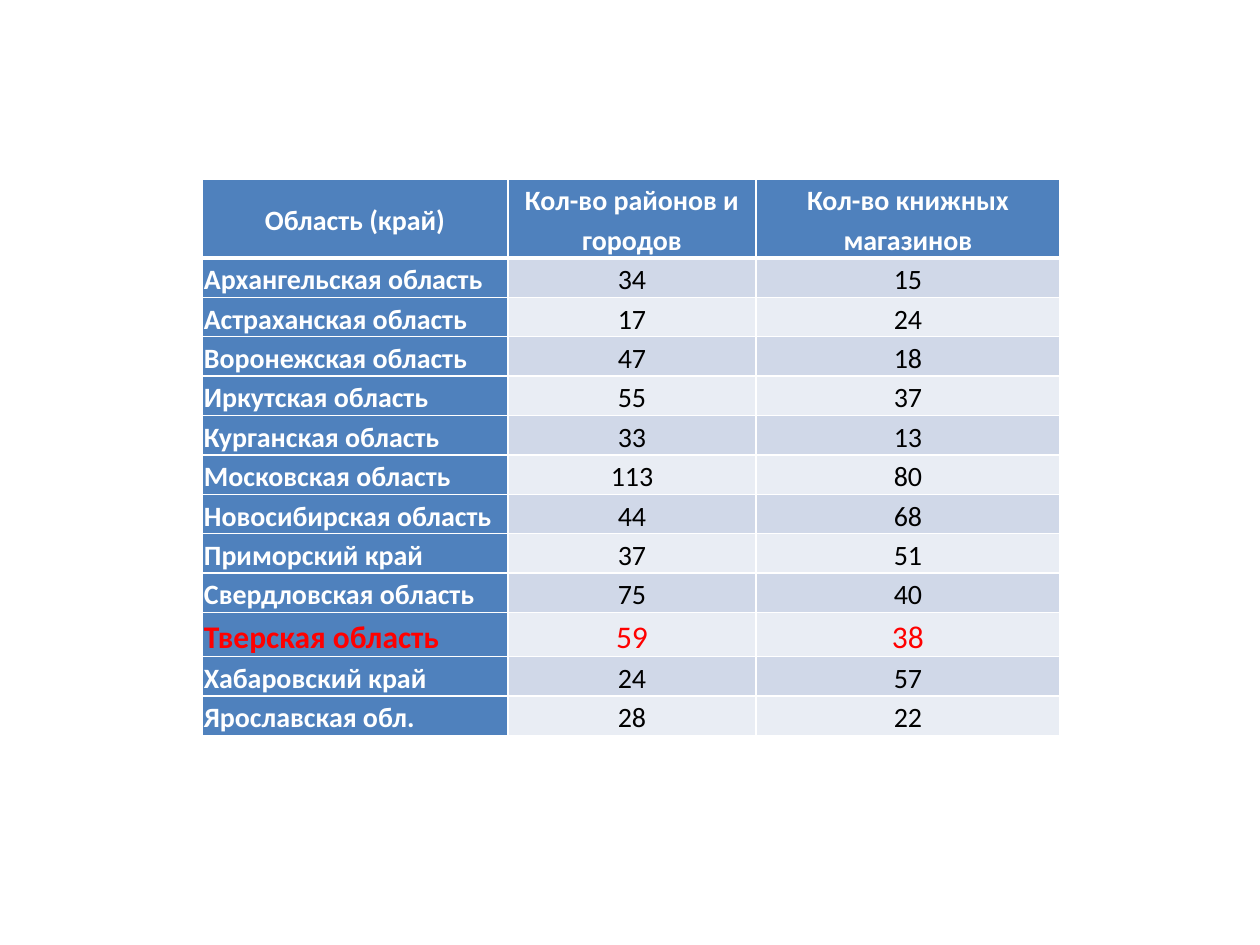
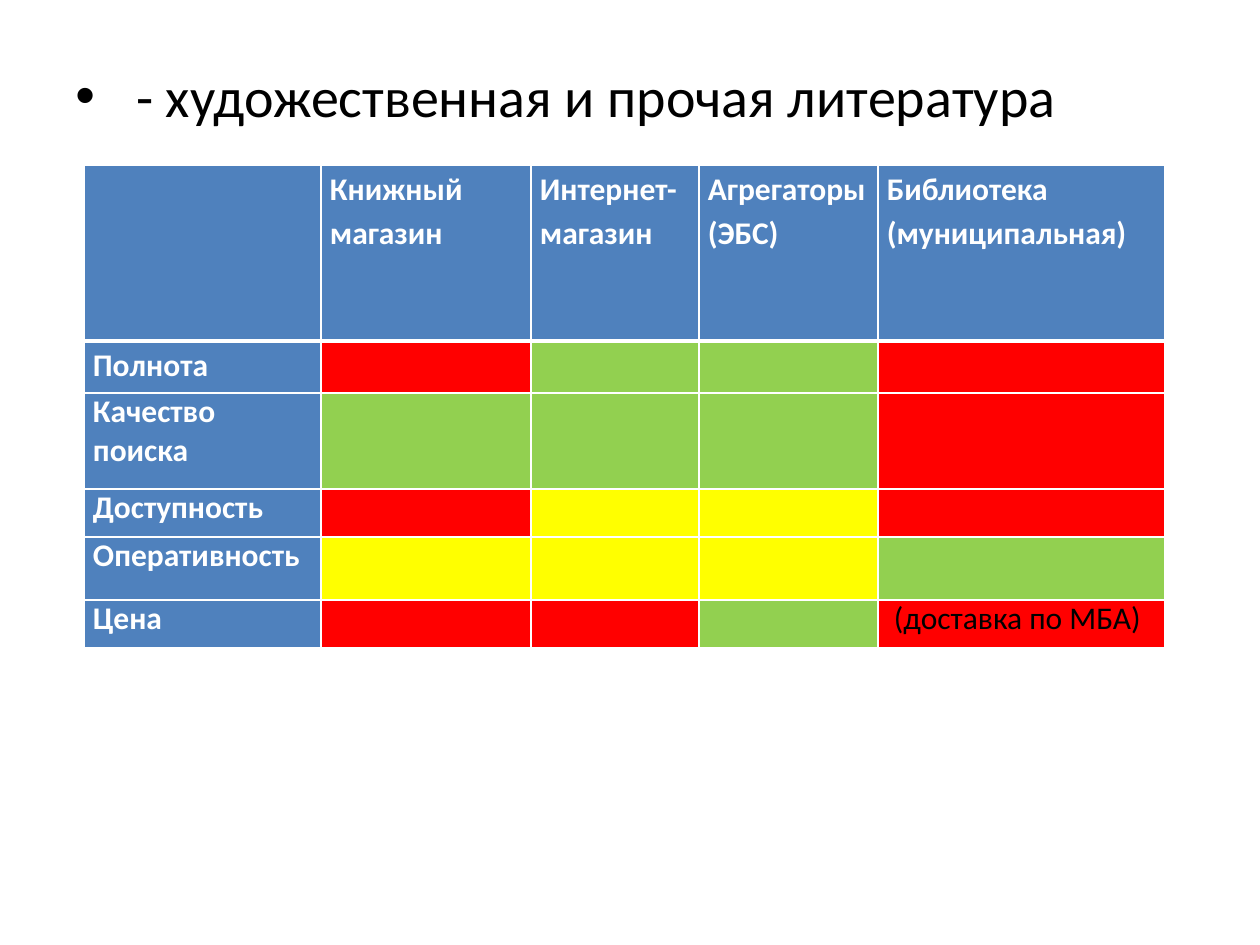
import pptx
import pptx.dml.color
import pptx.enum.text
import pptx.oxml
import pptx.oxml.ns
import pptx.util

PX = 914400 / 126
FONT = "Calibri"
WHITE, BLACK, BLUE = "FFFFFF", "000000", "4F81BD"
RED, GREEN, YELLOW = "FF0000", "92D050", "FFFF00"
BANDS = ["D0D8E8", "E9EDF4"]
RATING_FILLS = {"R": RED, "G": GREEN, "Y": YELLOW}
LEFT = pptx.enum.text.PP_ALIGN.LEFT
CENTER = pptx.enum.text.PP_ALIGN.CENTER
JUSTIFY = pptx.enum.text.PP_ALIGN.JUSTIFY
TOP = pptx.enum.text.MSO_ANCHOR.TOP
MIDDLE = pptx.enum.text.MSO_ANCHOR.MIDDLE

REGION_HEADERS = ["Область (край)", "Кол-во районов и городов", "Кол-во книжных магазинов"]
REGIONS = [
    ("Архангельская область", 34, 15),
    ("Астраханская область", 17, 24),
    ("Воронежская область", 47, 18),
    ("Иркутская область", 55, 37),
    ("Курганская область", 33, 13),
    ("Московская область", 113, 80),
    ("Новосибирская область", 44, 68),
    ("Приморский край", 37, 51),
    ("Свердловская область", 75, 40),
    ("Тверская область", 59, 38),
    ("Хабаровский край", 24, 57),
    ("Ярославская обл.", 28, 22),
]
HIGHLIGHTED_REGION = "Тверская область"

SOURCE_HEADERS = ["", "Книжный магазин", "Интернет-магазин", "Агрегаторы\n(ЭБС)",
                  "Библиотека (муниципальная)"]
# Criterion, rating of each source, paragraph format
RATINGS = [
    ("Полнота", "RGGR", {"line_spacing": 1.15}),
    ("Качество поиска", "GGGR", {"alignment": JUSTIFY}),
    ("Доступность", "RYYR", {}),
    ("Оперативность", "YYYG", {}),
    ("Цена", "RRGR", {}),
]
DELIVERY_NOTE = " (доставка по МБА)"


def px(length):
    return pptx.util.Emu(round(length * PX))


def rgb(value):
    return pptx.dml.color.RGBColor.from_string(value)


def set_all(target, values):
    for name, value in values.items():
        setattr(target, name, value)


def write_text(frame, text, size, color, bold=False, para_format=None):
    """Write each line of text as a paragraph in one style."""
    for index, line in enumerate(text.split("\n")):
        para = frame.add_paragraph() if index else frame.paragraphs[0]
        set_all(para, para_format or {})
        span = para.add_run()
        span.text = line
        set_all(span.font, {"name": FONT, "size": pptx.util.Pt(size), "bold": bold})
        span.font.color.rgb = rgb(color)


def add_borders(cell, widths):
    """Draw white borders; widths maps a side letter to points."""
    properties = cell._tc.get_or_add_tcPr()
    for side, width in widths.items():
        properties.append(pptx.oxml.parse_xml(
            f'<a:ln{side} {pptx.oxml.ns.nsdecls("a")} w="{pptx.util.Pt(width)}">'
            f'<a:solidFill><a:srgbClr val="{WHITE}"/></a:solidFill></a:ln{side}>'))


def add_grid(page, left, top, column_widths, row_heights, inset):
    """Add a white-ruled table with a thick line below its header."""
    table = page.shapes.add_table(
        len(row_heights), len(column_widths), px(left), px(top),
        px(sum(column_widths)), px(sum(row_heights))).table
    table.horz_banding = False
    for column, width in zip(table.columns, column_widths):
        column.width = px(width)
    for index, (row, height) in enumerate(zip(table.rows, row_heights)):
        row.height = px(height)
        for cell in row.cells:
            set_all(cell, {"margin_left": px(inset), "margin_right": px(inset),
                           "margin_top": 0, "margin_bottom": 0})
            add_borders(cell, {"L": 1, "R": 1, "T": 3 if index == 1 else 1,
                               "B": 1 if index else 3})
    return table


def fill_cell(cell, fill, text="", size=18, color=WHITE, bold=True,
              anchor=TOP, para_format=None):
    cell.fill.solid()
    cell.fill.fore_color.rgb = rgb(fill)
    cell.vertical_anchor = anchor
    if text:
        write_text(cell.text_frame, text, size, color, bold, para_format)


def add_region_table(page, left, top):
    heights = [79] + [44 if name == HIGHLIGHTED_REGION else 39 for name, *_ in REGIONS]
    table = add_grid(page, left, top, [306, 248, 304], heights, 2)
    centered = {"alignment": CENTER, "line_spacing": 1.15}
    for column, header in enumerate(REGION_HEADERS):
        fill_cell(table.cell(0, column), BLUE, header, 16, anchor=MIDDLE, para_format=centered)
    for row, (name, *counts) in enumerate(REGIONS, 1):
        highlighted = name == HIGHLIGHTED_REGION
        size = 18 if highlighted else 16
        fill_cell(table.cell(row, 0), BLUE, name, size, RED if highlighted else WHITE,
                  para_format={"alignment": LEFT, "line_spacing": 1.15})
        for column, count in enumerate(counts, 1):
            fill_cell(table.cell(row, column), BANDS[(row - 1) % 2], str(count), size,
                      RED if highlighted else BLACK, False, MIDDLE, centered)


def add_rating_table(page, left, top):
    table = add_grid(page, left, top, [237, 210, 168, 179, 287],
                     [176, 52, 96, 48, 63, 48], 9)
    for column, header in enumerate(SOURCE_HEADERS):
        fill_cell(table.cell(0, column), BLUE, header, para_format={"line_spacing": 1.15})
    for row, (criterion, ratings, para_format) in enumerate(RATINGS, 1):
        fill_cell(table.cell(row, 0), BLUE, criterion, para_format=para_format)
        for column, rating in enumerate(ratings, 1):
            is_note = (row, column) == (len(RATINGS), len(ratings))
            fill_cell(table.cell(row, column), RATING_FILLS[rating],
                      DELIVERY_NOTE if is_note else "", color=BLACK, bold=False)


def add_bullet(page, left, top, width, height, text):
    box = page.shapes.add_textbox(px(left), px(top), px(width), px(height))
    box.text_frame.word_wrap = True
    write_text(box.text_frame, text, 32, BLACK,
               para_format={"space_before": pptx.util.Pt(3.6)})
    properties = box.text_frame.paragraphs[0]._p.get_or_add_pPr()
    properties.set("marL", str(px(48)))
    properties.set("indent", str(px(-48)))
    for tag in ('buFont typeface="Arial"', 'buChar char="•"'):
        properties.append(pptx.oxml.parse_xml(f'<a:{tag} {pptx.oxml.ns.nsdecls("a")}/>'))


def build_regions_page(page):
    add_region_table(page, 202, 179)


def build_ratings_page(page):
    add_bullet(page, 63, 55, 1134, 595, " - художественная и прочая литература")
    add_rating_table(page, 84, 165)


def main():
    deck = pptx.Presentation()
    set_all(deck, {"slide_width": px(1260), "slide_height": px(945)})
    for build_page in (build_regions_page, build_ratings_page):
        build_page(deck.slides.add_slide(deck.slide_layouts[6]))
    deck.save("out.pptx")


if __name__ == "__main__":
    main()
